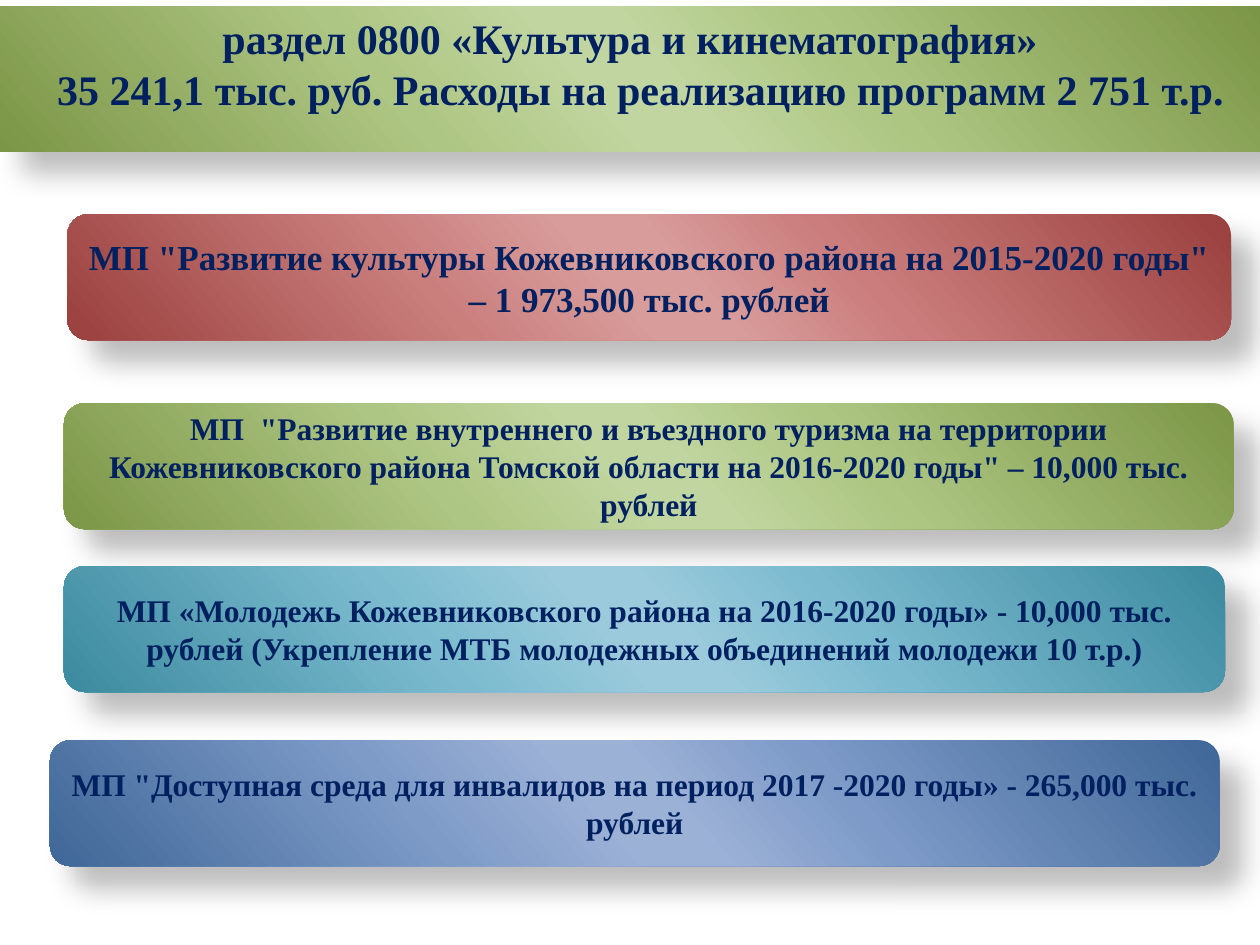
from dataclasses import dataclass

from lxml import etree
from pptx import Presentation
from pptx.dml.color import RGBColor
from pptx.enum import shapes, text
from pptx.oxml import ns, parse_xml
from pptx.util import Pt

FONT = "Times New Roman"
NAVY = "002060"
STOPS = (0, 33, 47, 53, 68, 100)
GREEN = ("7C9647", "ADC682", "C0D59F", "C0D59F", "AEC683", "7C9647")
RED = ("9A403E", "CA7D7C", "D89C9B", "D89C9B", "CA7F7D", "9A403E")
TEAL = ("3C8A9F", "7BBACF", "9ACADC", "9ACADC", "7CBBCF", "3C8A9F")
BLUE = ("3F6797", "7D9AC8", "9CB1D6", "9CB1D6", "7E9BC8", "3F6797")
GRADIENT_ANGLE = 139
PANEL_HEIGHT = 72


@dataclass
class Program:
    wording: str
    left: float
    top: float
    width: float
    font_size: int
    colors: tuple[str, ...]


PROGRAMS = [
    Program('МП "Развитие культуры Кожевниковского района на 2015-2020 годы" – 1 973,500 тыс. рублей',
            38.5, 122.4, 665, 20, RED),
    Program('МП  "Развитие внутреннего и въездного туризма на территории Кожевниковского района '
            'Томской области на 2016-2020 годы" – 10,000 тыс. рублей',
            36.5, 230.4, 668.5, 18, GREEN),
    Program('МП «Молодежь Кожевниковского района на 2016-2020 годы» - 10,000 тыс. рублей '
            '(Укрепление МТБ молодежных объединений молодежи 10 т.р.)',
            36.5, 323.5, 663.5, 18, TEAL),
    Program('МП "Доступная среда для инвалидов на период 2017 -2020 годы» - 265,000 тыс. рублей',
            28.5, 423, 668.5, 18, BLUE),
]


def rgb(value: str) -> RGBColor:
    return RGBColor.from_string(value)


def apply_gradient(shape, colors: tuple[str, ...]) -> None:
    shape.fill.gradient()
    old_fill = shape.element.spPr.find(ns.qn("a:gradFill"))
    stops = "".join(
        f'<a:gs pos="{position * 1000}"><a:srgbClr val="{color}"/></a:gs>'
        for position, color in zip(STOPS, colors)
    )
    new_fill = parse_xml(
        f'<a:gradFill {ns.nsdecls("a")} rotWithShape="1"><a:gsLst>{stops}</a:gsLst>'
        f'<a:lin ang="{GRADIENT_ANGLE * 60000}" scaled="0"/></a:gradFill>'
    )
    old_fill.getparent().replace(old_fill, new_fill)


def apply_shadow(shape) -> None:
    shape.shadow.inherit = False
    effects = shape.element.spPr.find(ns.qn("a:effectLst"))
    shadow = etree.SubElement(
        effects, ns.qn("a:outerShdw"), blurRad=str(Pt(15)), dist=str(Pt(18)),
        dir=str(45 * 60000), algn="tl", rotWithShape="0",
    )
    color = etree.SubElement(shadow, ns.qn("a:srgbClr"), val="000000")
    etree.SubElement(color, ns.qn("a:alpha"), val="26000")


def style_panel(shape, colors: tuple[str, ...], font_size: int, anchor) -> None:
    apply_gradient(shape, colors)
    shape.line.fill.background()
    apply_shadow(shape)
    frame = shape.text_frame
    frame.word_wrap = True
    frame.auto_size = text.MSO_AUTO_SIZE.NONE
    frame.vertical_anchor = anchor
    for paragraph in frame.paragraphs:
        paragraph.alignment = text.PP_ALIGN.CENTER
        for run in paragraph.runs:
            run.font.name = FONT
            run.font.size = Pt(font_size)
            run.font.bold = True
            run.font.color.rgb = rgb(NAVY)


def draw_title(slide) -> None:
    title = slide.shapes.title
    title.left, title.top, title.width, title.height = Pt(0), Pt(3.6), Pt(720), Pt(82.8)
    title.text_frame.text = (
        "раздел 0800 «Культура и кинематография»\n"
        "35 241,1 тыс. руб. Расходы на реализацию программ 2 751 т.р."
    )
    style_panel(title, GREEN, 24, text.MSO_ANCHOR.TOP)
    amount = title.text_frame.paragraphs[1]
    amount._p.get_or_add_pPr().set("marL", str(Pt(12)))


def draw_program(slide, program: Program) -> None:
    panel = slide.shapes.add_shape(
        shapes.MSO_SHAPE.ROUNDED_RECTANGLE,
        Pt(program.left), Pt(program.top), Pt(program.width), Pt(PANEL_HEIGHT),
    )
    panel.text_frame.text = program.wording
    style_panel(panel, program.colors, program.font_size, text.MSO_ANCHOR.MIDDLE)


def main() -> None:
    presentation = Presentation()
    presentation.slide_width, presentation.slide_height = Pt(720), Pt(540)
    slide = presentation.slides.add_slide(presentation.slide_layouts[5])
    draw_title(slide)
    for program in PROGRAMS:
        draw_program(slide, program)
    presentation.save("out.pptx")


if __name__ == "__main__":
    main()
